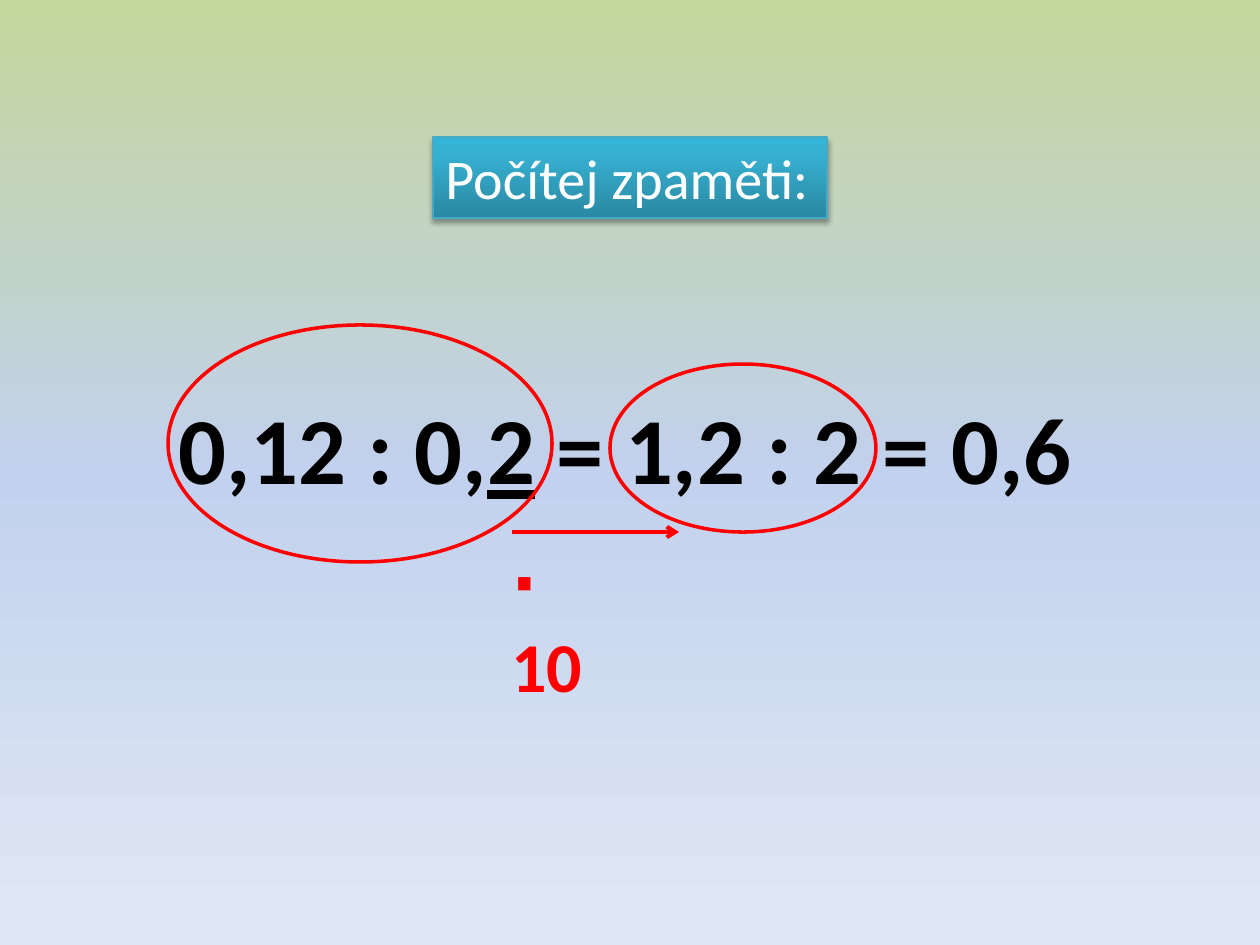
from lxml.etree import SubElement
from pptx import Presentation
from pptx.dml.color import RGBColor
from pptx.enum.shapes import MSO_CONNECTOR as Connector, MSO_SHAPE as Shape
from pptx.enum.text import MSO_AUTO_SIZE as AutoSize, PP_ALIGN as Align
from pptx.oxml.ns import qn
from pptx.util import Pt

PX = 914400 / 126
BLACK = RGBColor(0x00, 0x00, 0x00)
WHITE = RGBColor(0xFF, 0xFF, 0xFF)
RED = RGBColor(0xFF, 0x00, 0x00)
TEAL_LINE = RGBColor(0x46, 0xAA, 0xC5)
TEAL_STOPS = [
    (0, RGBColor(0x2A, 0x88, 0xA2)),
    (80, RGBColor(0x37, 0xB1, 0xD2)),
    (100, RGBColor(0x34, 0xB4, 0xD6)),
]
SKY_STOPS = [
    (0, RGBColor(0xC3, 0xD6, 0x9B)),
    (50, RGBColor(0xC2, 0xD1, 0xED)),
    (100, RGBColor(0xE1, 0xE8, 0xF5)),
]


def px(*lengths):
    return [round(length * PX) for length in lengths]


def set_gradient(fill, element, stops, angle):
    fill.gradient()
    fill.gradient_angle = angle
    stop_list = next(element.iter(qn("a:gsLst")))
    for old_stop in list(stop_list):
        stop_list.remove(old_stop)
    for position, color in stops:
        stop = SubElement(stop_list, qn("a:gs"), pos=str(position * 1000))
        SubElement(stop, qn("a:srgbClr"), val=str(color))


def add_shadow(shape):
    shape.shadow.inherit = False
    effects = shape._element.spPr.find(qn("a:effectLst"))
    shadow = SubElement(effects, qn("a:outerShdw"), blurRad=str(Pt(3.1)),
                        dist=str(Pt(1.8)), dir="5400000", rotWithShape="0")
    color = SubElement(shadow, qn("a:srgbClr"), val=str(BLACK))
    SubElement(color, qn("a:alpha"), val="35000")


def write(shape, parts, size, color, bold=False, wrap=False):
    frame = shape.text_frame
    frame.word_wrap = wrap
    frame.auto_size = AutoSize.SHAPE_TO_FIT_TEXT
    para = frame.paragraphs[0]
    para.alignment = Align.LEFT
    for text, underline in parts:
        span = para.add_run()
        span.text = text
        span.font.name = "Calibri"
        span.font.size = Pt(size)
        span.font.bold = bold
        span.font.underline = underline
        span.font.color.rgb = color


def add_heading(page, box):
    heading = page.shapes.add_shape(Shape.RECTANGLE, *px(*box))
    set_gradient(heading.fill, heading._element, TEAL_STOPS, 90)
    heading.line.color.rgb = TEAL_LINE
    heading.line.width = Pt(0.75)
    add_shadow(heading)
    write(heading, [("Počítej zpaměti:", False)], 32, WHITE)


def add_ring(page, box):
    ring = page.shapes.add_shape(Shape.OVAL, *px(*box))
    ring.shadow.inherit = False
    ring.fill.background()
    ring.line.color.rgb = RED
    ring.line.width = Pt(2)


def add_arrow(page, left, top, length):
    arrow = page.shapes.add_connector(
        Connector.STRAIGHT, *px(left, top, left + length, top))
    arrow.line.color.rgb = RED
    arrow.line.width = Pt(2.25)
    SubElement(arrow.line._get_or_add_ln(), qn("a:tailEnd"), type="arrow")
    SubElement(arrow._element.spPr, qn("a:effectLst"))


def add_equation(page, box):
    left, top, width, height = box

    # Equation with the divisor's last digit underlined
    equation = page.shapes.add_textbox(*px(*box))
    parts = [("0,12 : 0,", False), ("2", True), (" = 1,2 : 2 = 0,6", False)]
    write(equation, parts, 54, BLACK, bold=True)

    # Ring around the first division
    add_ring(page, (left + 2, top - 59, 384, 237))

    # Multiplier below the equation
    multiplier = page.shapes.add_textbox(*px(left + 333, top + 148, 131, 97))
    write(multiplier, [("⋅ 10", False)], 40, RED, bold=True, wrap=True)

    # Ring around the second division, and the arrow leading to it
    add_ring(page, (left + 444, top - 20, 266, 168))
    add_arrow(page, left + 346, top + 148, 167)


def main():
    deck = Presentation()
    deck.slide_width, deck.slide_height = px(1260, 945)
    page = deck.slides.add_slide(deck.slide_layouts[6])
    set_gradient(page.background.fill, page._element, SKY_STOPS, 270)
    add_heading(page, (433, 137, 394, 81))
    add_equation(page, (166, 384, 928, 127))
    deck.save("out.pptx")


if __name__ == "__main__":
    main()
